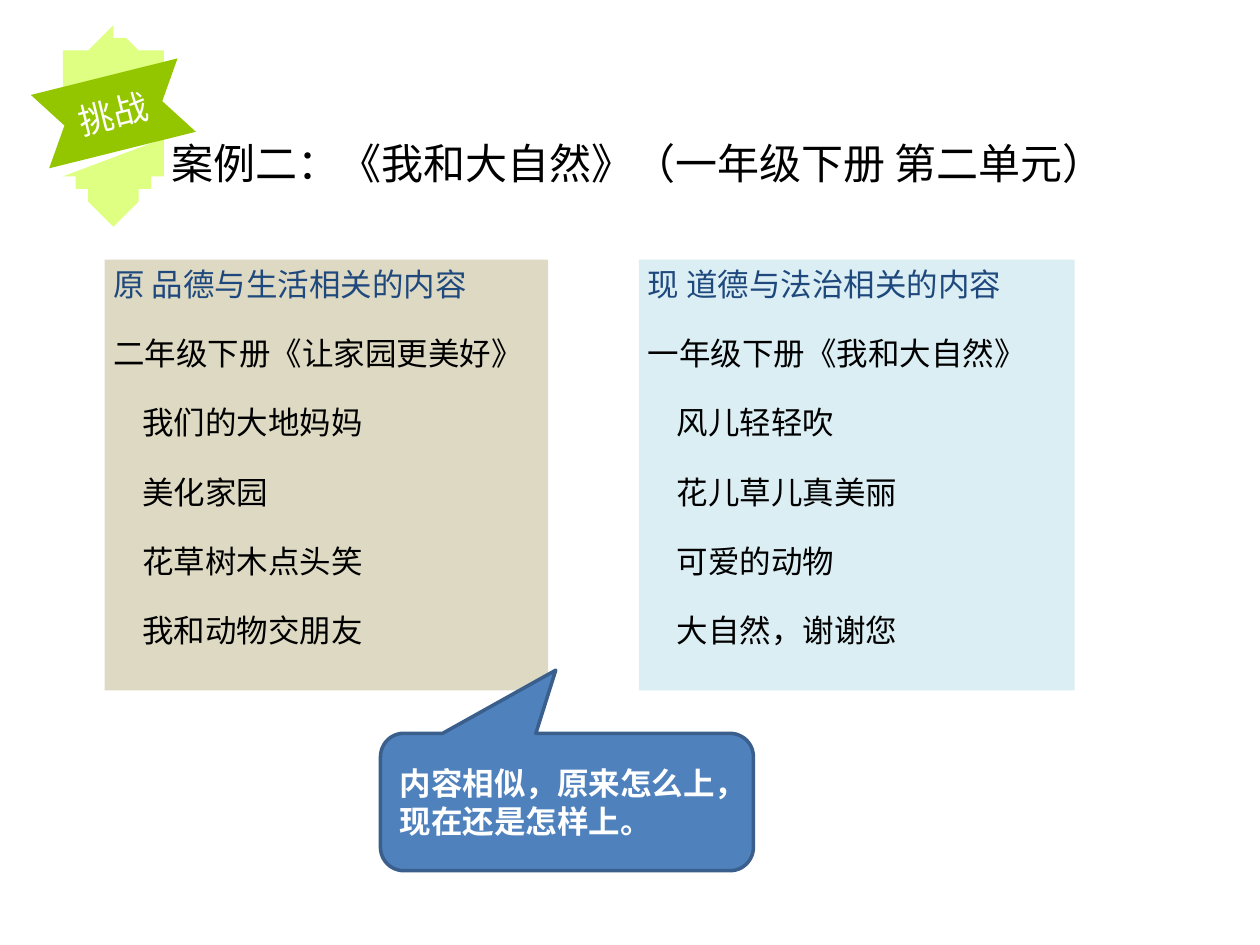
from dataclasses import dataclass

from pptx import Presentation
from pptx.dml.color import RGBColor
from pptx.enum.shapes import MSO_SHAPE
from pptx.enum.text import MSO_ANCHOR, PP_ALIGN
from pptx.util import Inches, Pt

RECT = MSO_SHAPE.RECTANGLE
CALLOUT = MSO_SHAPE.ROUNDED_RECTANGULAR_CALLOUT
TOP, MIDDLE = MSO_ANCHOR.TOP, MSO_ANCHOR.MIDDLE
LEFT, CENTER = PP_ALIGN.LEFT, PP_ALIGN.CENTER

COLS, ROWS = 100, 75
CELL = Inches(0.1)


@dataclass(frozen=True)
class Theme:
    black: str = "000000"
    white: str = "FFFFFF"
    heading: str = "1F497D"
    sand: str = "DDD9C3"
    sky: str = "DBEEF4"
    callout: str = "4F81BD"
    callout_line: str = "3A5F8C"
    shield: str = "DFFF82"
    ribbon: str = "94C600"
    title_font: str = "Arial"
    body_font: str = "Noto Sans CJK SC"
    callout_font: str = "Calibri"
    title_size: int = 24
    badge_size: int = 20
    body_size: int = 18


@dataclass(frozen=True)
class Box:
    """Place on the grid, in columns and rows."""
    col: float
    row: float
    cols: float
    rows: float

    def emu(self) -> list[int]:
        return [round(n * CELL) for n in (self.col, self.row, self.cols, self.rows)]


@dataclass(frozen=True)
class Line:
    text: str
    font: str
    size: int
    color: str
    bold: bool = False
    indent: float = 0
    align: PP_ALIGN = LEFT


@dataclass(frozen=True)
class Panel:
    box: Box
    fill: str
    heading: str
    unit: str
    lessons: tuple[str, ...]


T = Theme()
PANELS = (
    Panel(Box(8.3, 20.6, 35.2, 34.2), T.sand, "原 品德与生活相关的内容",
          "二年级下册《让家园更美好》",
          ("我们的大地妈妈", "美化家园", "花草树木点头笑", "我和动物交朋友")),
    Panel(Box(50.7, 20.6, 34.6, 34.2), T.sky, "现 道德与法治相关的内容",
          "一年级下册《我和大自然》",
          ("风儿轻轻吹", "花儿草儿真美丽", "可爱的动物", "大自然，谢谢您")),
)

# The shield's right half: columns from its axis, rows from the slide's top
AXIS = 8.95
CROWN = ((0.1, 2.1), (0.3, 2.5), (0.5, 2.8), (0.8, 3.1), (1.2, 3.35),
         (1.7, 3.58), (2.3, 3.75), (3, 3.87), (3.95, 3.93))
POINT = ((3.65, 13.6), (3.3, 14.2), (2.9, 14.8), (2.4, 15.45), (1.8, 16.2),
         (1.2, 16.8), (0.6, 17.35), (0, 17.75))
RIBBON = Box(2.8, 6.3, 12.3, 5.7)
NOTCH = 1.9


def write(sp, lines: list[Line], anchor=TOP, margins=(0.1, 0.05), gap: float = 0) -> None:
    tf = sp.text_frame
    side, edge = map(Inches, margins)
    settings = {"word_wrap": True, "vertical_anchor": anchor, "margin_left": side,
                "margin_right": side, "margin_top": edge, "margin_bottom": edge}
    for name, value in settings.items():
        setattr(tf, name, value)
    for i, line in enumerate(lines):
        p = tf.add_paragraph() if i else tf.paragraphs[0]
        p.alignment = line.align
        if i:
            p.space_before = Pt(gap)
        if line.indent:
            p._p.get_or_add_pPr().set("marL", str(Inches(line.indent)))
        r = p.add_run()
        r.text = line.text
        font = {"name": line.font, "size": Pt(line.size), "bold": line.bold}
        for name, value in font.items():
            setattr(r.font, name, value)
        r.font.color.rgb = RGBColor.from_string(line.color)


def paint(sp, fill: str, line: str = "", width: float = 0) -> None:
    sp.shadow.inherit = False
    sp.fill.solid()
    sp.fill.fore_color.rgb = RGBColor.from_string(fill)
    if line:
        sp.line.color.rgb = RGBColor.from_string(line)
        sp.line.width = Pt(width)
    else:
        sp.line.fill.background()


def draw_outline(shapes, contours: list[list[tuple[float, float]]], fill: str):
    first, *others = contours
    fb = shapes.build_freeform(*first[0], scale=CELL)
    fb.add_line_segments(first[1:], close=True)
    for points in others:
        fb.move_to(*points[0])
        fb.add_line_segments(points[1:], close=True)
    sp = fb.convert_to_shape()
    paint(sp, fill)
    return sp


def draw_panel(shapes, panel: Panel) -> None:
    sp = shapes.add_shape(RECT, *panel.box.emu())
    paint(sp, panel.fill)
    style = (T.body_font, T.body_size)
    lines = [Line(panel.heading, *style, T.heading), Line(panel.unit, *style, T.black)]
    lines += [Line(text, *style, T.black, indent=0.23) for text in panel.lessons]
    write(sp, lines, margins=(0.07, 0.04), gap=18)


def draw_badge(shapes) -> None:
    """Draw the shield in two parts, with the tilted ribbon across it."""
    def right(half):
        return [(AXIS + x, y) for x, y in half]

    def left(half):
        return [(AXIS - x, y) for x, y in reversed(half)]

    edge = CROWN[-1][0]
    crown = [(AXIS, 2), *right(CROWN), (AXIS + edge, 4.6), (AXIS - edge, 7.5), *left(CROWN)]
    point = [*right(((edge, 10.9), (edge, 12), (3.85, 12.8))), *right(POINT), *left(POINT[:-1])]
    draw_outline(shapes, [crown, point], T.shield)

    x, y, w, h = RIBBON.col, RIBBON.row, RIBBON.cols, RIBBON.rows
    ribbon = [(x, y), (x + w, y), (x + w - NOTCH, y + h / 2),
              (x + w, y + h), (x, y + h), (x + NOTCH, y + h / 2)]
    sp = draw_outline(shapes, [ribbon], T.ribbon)
    sp.rotation = 346
    write(sp, [Line("挑战", T.body_font, T.badge_size, T.white, align=CENTER)], MIDDLE)


def main() -> None:
    prs = Presentation()
    prs.slide_width, prs.slide_height = COLS * CELL, ROWS * CELL
    s = prs.slides.add_slide(prs.slide_layouts[6])

    title = s.shapes.add_textbox(*Box(12.6, 10.4, 91.3, 4.7).emu())
    write(title, [Line("案例二：《我和大自然》（一年级下册 第二单元）",
                       T.title_font, T.title_size, T.black)])
    for panel in PANELS:
        draw_panel(s.shapes, panel)

    callout = s.shapes.add_shape(CALLOUT, *Box(30.2, 58.2, 29.6, 10.9).emu())
    for i, value in enumerate((-0.03, -0.96, 0.17)):
        callout.adjustments[i] = value
    paint(callout, T.callout, T.callout_line, 2)
    write(callout, [Line("内容相似，原来怎么上，现在还是怎样上。",
                         T.callout_font, T.body_size, T.white, bold=True)], MIDDLE)
    draw_badge(s.shapes)
    prs.save("out.pptx")


if __name__ == "__main__":
    main()
